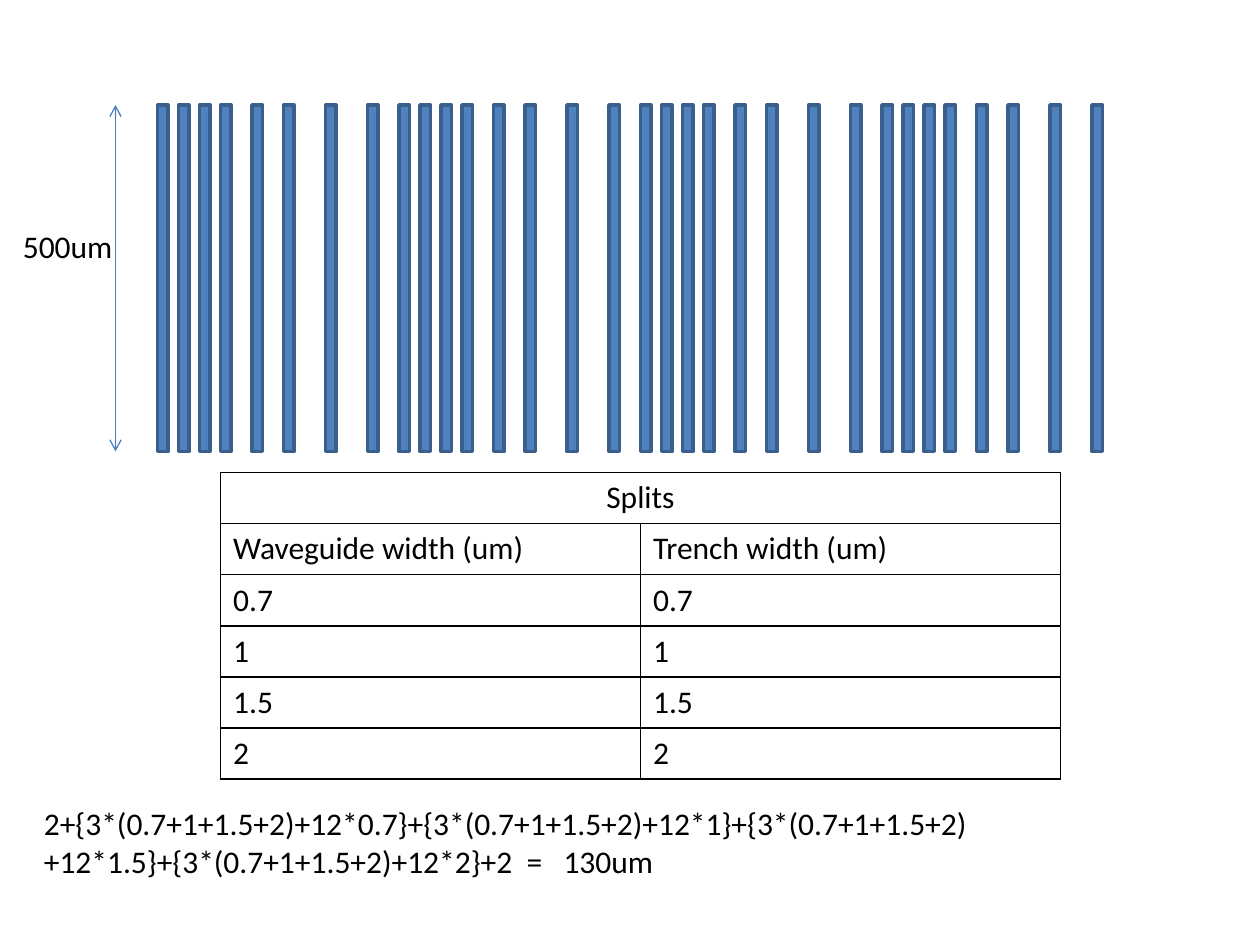
from dataclasses import dataclass

from lxml import etree
from pptx import Presentation
from pptx import util as u
from pptx.dml.color import RGBColor
from pptx.enum import shapes, text
from pptx.oxml.ns import qn

COLS, ROWS = 120, 90  # grid over the slide, twelve units to the inch


@dataclass(frozen=True)
class Theme:
    font: str = "Calibri"
    size: float = 18
    ink: str = "000000"
    bar: str = "4F81BD"
    bar_edge: str = "3A5F8C"
    arrow: str = "4B7EBC"
    bar_line: float = 2
    arrow_line: float = 0.75
    border: float = 1


def rgb(color):
    return RGBColor.from_string(color)


def add_text(tf, content, *, font, size, color, align=text.PP_ALIGN.LEFT):
    p = tf.paragraphs[0]
    p.alignment = align
    r = p.add_run()
    r.text = content
    r.font.name, r.font.size = font, u.Pt(size)
    r.font.color.rgb = rgb(color)


class Page:
    def __init__(self, prs, theme):
        self.theme = theme
        self.s = prs.slides.add_slide(prs.slide_layouts[6])
        self.unit_x = prs.slide_width / COLS
        self.unit_y = prs.slide_height / ROWS

    def at(self, *grid):
        """Turn alternating column and row lengths into EMU."""
        units = (self.unit_x, self.unit_y) * 2
        return [round(n * unit) for n, unit in zip(grid, units)]

    def body(self, tf, content, **fmt):
        """Fill a text frame in the theme's text style."""
        t = self.theme
        add_text(tf, content, font=t.font, size=t.size, color=t.ink, **fmt)

    def bar(self, x, y, w, h):
        sp = self.s.shapes.add_shape(shapes.MSO_SHAPE.RECTANGLE, *self.at(x, y, w, h))
        sp.shadow.inherit = False
        sp.fill.solid()
        sp.fill.fore_color.rgb = rgb(self.theme.bar)
        sp.line.color.rgb = rgb(self.theme.bar_edge)
        sp.line.width = u.Pt(self.theme.bar_line)

    def label(self, content, x, y, w, h):
        tf = self.s.shapes.add_textbox(*self.at(x, y, w, h)).text_frame
        tf.word_wrap = True
        tf.auto_size = text.MSO_AUTO_SIZE.SHAPE_TO_FIT_TEXT
        self.body(tf, content)

    def double_arrow(self, x1, y1, x2, y2):
        line = self.s.shapes.add_connector(
            shapes.MSO_CONNECTOR.STRAIGHT, *self.at(x1, y1, x2, y2))
        line.line.color.rgb = rgb(self.theme.arrow)
        line.line.width = u.Pt(self.theme.arrow_line)
        sp_pr = line._element.spPr
        ln = sp_pr.find(qn("a:ln"))
        for end in ("a:headEnd", "a:tailEnd"):
            etree.SubElement(ln, qn(end), type="arrow")
        etree.SubElement(sp_pr, qn("a:effectLst"))

    def border(self, cell):
        tc_pr = cell._tc.get_or_add_tcPr()
        for side in ("a:lnL", "a:lnR", "a:lnT", "a:lnB"):
            ln = etree.SubElement(tc_pr, qn(side), w=str(u.Pt(self.theme.border)))
            fill = etree.SubElement(ln, qn("a:solidFill"))
            etree.SubElement(fill, qn("a:srgbClr"), val=self.theme.ink)

    def table(self, title, rows, x, y, w, h):
        """Draw rows under a title that spans every column."""
        n_rows, n_cols = len(rows) + 1, len(rows[0])
        tbl = self.s.shapes.add_table(n_rows, n_cols, *self.at(x, y, w, h)).table
        tbl.first_row = tbl.horz_banding = False
        for cell in tbl.iter_cells():
            self.border(cell)
            cell.fill.background()
        tbl.cell(0, 0).merge(tbl.cell(0, n_cols - 1))
        self.body(tbl.cell(0, 0).text_frame, title, align=text.PP_ALIGN.CENTER)
        for i, row in enumerate(rows, start=1):
            for j, value in enumerate(row):
                self.body(tbl.cell(i, j).text_frame, value)


def main():
    prs = Presentation()
    prs.slide_width, prs.slide_height = u.Inches(10), u.Inches(7.5)
    page = Page(prs, Theme())

    top, height = 10, 33
    first, period, groups = 15, 23, 4
    offsets = (0, 2, 4, 6, 9, 12, 16, 20)
    for group in range(groups):
        for offset in offsets:
            page.bar(first + group * period + offset, top, 1, height)

    widths = ("0.7", "1", "1.5", "2")
    header = ("Waveguide width (um)", "Trench width (um)")
    page.table("Splits", [header] + [(w, w) for w in widths], 21, 45, 80, 29.2)

    waveguides = "3*(" + "+".join(widths) + ")"
    terms = "+".join(f"{{{waveguides}+12*{w}}}" for w in widths)
    page.label(f"2+{terms}+2  =   130um", 3, 76, 91, 8.5)

    page.double_arrow(11, top, 11, top + height)
    page.label("500um", 1, 21, 12, 4.8)
    prs.save("out.pptx")


if __name__ == "__main__":
    main()
